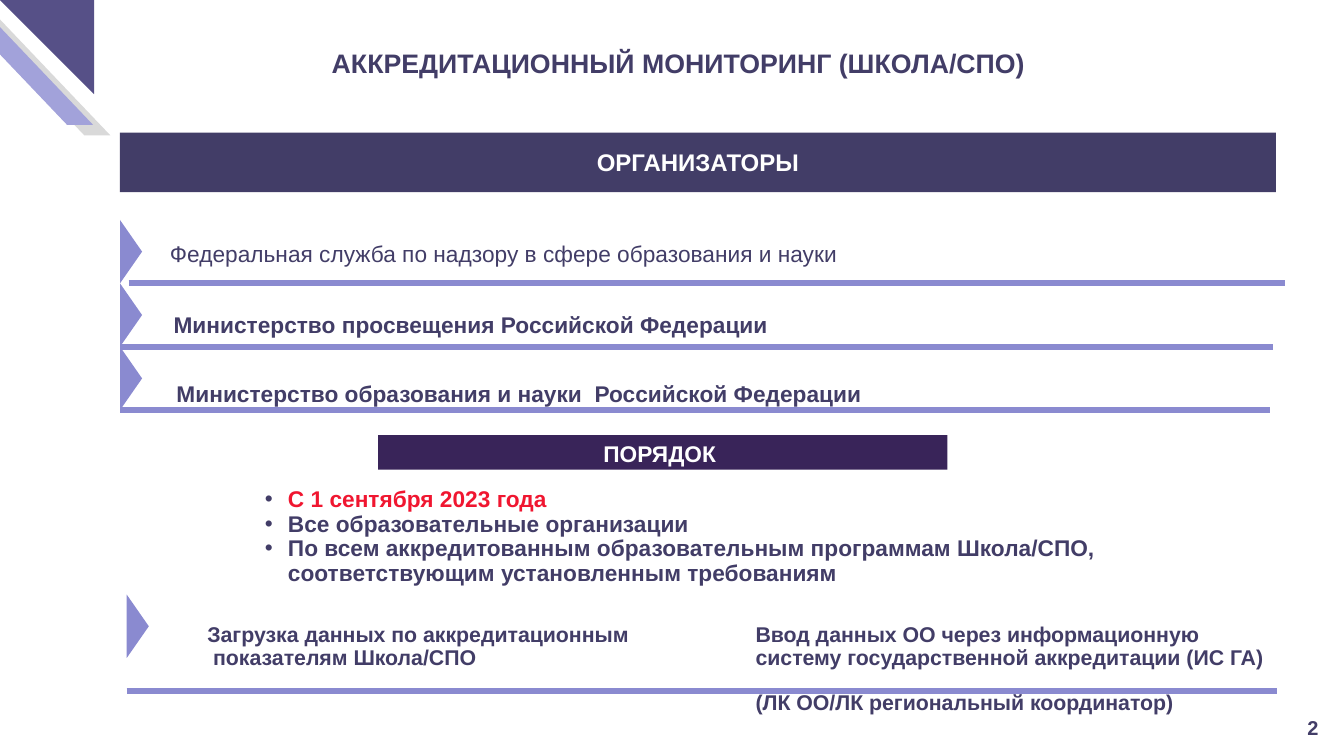
import pptx
import pptx.dml.color
import pptx.enum.shapes
import pptx.enum.text
import pptx.oxml.ns
import pptx.util
from dataclasses import dataclass
from lxml import etree

Inches = pptx.util.Inches
Pt = pptx.util.Pt
qn = pptx.oxml.ns.qn
SHAPES = pptx.enum.shapes.MSO_SHAPE
ALIGN = pptx.enum.text.PP_ALIGN
ANCHOR = pptx.enum.text.MSO_ANCHOR


@dataclass(frozen=True)
class Theme:
    font: str = "Arial"
    ink: str = "423D67"
    accent: str = "8A8AD0"
    alert: str = "F01630"
    plum: str = "392459"
    white: str = "FFFFFF"
    corner_dark: str = "565087"
    corner_light: str = "A2A2DA"
    corner_grey: str = "D9D9D9"
    title: int = 20
    heading: int = 18
    body: int = 17
    note: int = 16
    number: int = 15
    rule: float = 4.5


THEME = Theme()
PADDED = (0.1, 0.05)


def rgb(value):
    return pptx.dml.color.RGBColor.from_string(value)


def add_shape(slide, kind, box, fill):
    shape = slide.shapes.add_shape(kind, *map(Inches, box))
    shape.shadow.inherit = False
    shape.fill.solid()
    shape.fill.fore_color.rgb = rgb(fill)
    shape.line.fill.background()
    return shape


def set_frame(shape, insets=(0, 0), anchor=ANCHOR.TOP):
    frame = shape.text_frame
    frame.word_wrap = True
    frame.vertical_anchor = anchor
    frame.margin_left = frame.margin_right = Inches(insets[0])
    frame.margin_top = frame.margin_bottom = Inches(insets[1])
    return frame


def add_bullet(paragraph, indent=0.24):
    properties = paragraph._p.get_or_add_pPr()
    properties.set("marL", str(Inches(indent)))
    properties.set("indent", str(-Inches(indent)))
    color = etree.SubElement(properties, qn("a:buClr"))
    etree.SubElement(color, qn("a:srgbClr")).set("val", THEME.ink)
    etree.SubElement(properties, qn("a:buFont")).set("typeface", THEME.font)
    etree.SubElement(properties, qn("a:buChar")).set("char", "•")


def write(frame, lines, size, color=THEME.ink, bold=True, align=ALIGN.LEFT,
          spacing=None, bullets=False):
    """Write one paragraph per line; a tuple is one paragraph with line breaks."""
    paragraphs = []
    for index, line in enumerate(lines):
        paragraph = frame.paragraphs[0] if index == 0 else frame.add_paragraph()
        if bullets:
            add_bullet(paragraph)
        paragraph.alignment = align
        if spacing:
            paragraph.line_spacing = spacing
        for part, text in enumerate(line if isinstance(line, tuple) else (line,)):
            if part:
                paragraph.add_line_break()
            run = paragraph.add_run()
            run.text = text
            run.font.name = THEME.font
            run.font.size = Pt(size)
            run.font.bold = bold
            run.font.color.rgb = rgb(color)
        paragraphs.append(paragraph)
    return paragraphs


def add_text(slide, box, lines, size, insets=(0, 0), **style):
    text_box = slide.shapes.add_textbox(*map(Inches, box))
    return write(set_frame(text_box, insets), lines, size, **style)


def add_rule(slide, left, top, width):
    rule = slide.shapes.add_connector(
        pptx.enum.shapes.MSO_CONNECTOR.STRAIGHT,
        Inches(left), Inches(top), Inches(left + width), Inches(top))
    rule.line.color.rgb = rgb(THEME.accent)
    rule.line.width = Pt(THEME.rule)
    etree.SubElement(rule._element.spPr, qn("a:effectLst"))


def add_marker(slide, left, top, width=0.23, height=0.66):
    """Right-pointing triangle whose visible box starts at left, top."""
    shift = (height - width) / 2
    marker = add_shape(slide, SHAPES.ISOSCELES_TRIANGLE,
                       (left - shift, top + shift, height, width), THEME.accent)
    marker.rotation = 90


def add_corner(slide, left, top):
    for x, y, color in ((-0.36, 0.11, THEME.corner_grey),
                        (-0.54, 0, THEME.corner_light)):
        stripe = add_shape(slide, SHAPES.PARALLELOGRAM,
                           (left + x, top + y, 1.51, 1.3), color)
        stripe.adjustments[0] = 0.953
        stripe._element.spPr.find(qn("a:xfrm")).set("flipH", "1")
    triangle = add_shape(slide, SHAPES.RIGHT_TRIANGLE,
                         (left, top, 0.98, 0.98), THEME.corner_dark)
    triangle.rotation = 180


def add_banner(slide, box, text, fill, size, insets, anchor):
    banner = add_shape(slide, SHAPES.RECTANGLE, box, fill)
    write(set_frame(banner, insets, anchor), [text], size,
          color=THEME.white, align=ALIGN.CENTER)


def add_organizers(slide, left, top, pitch=0.66):
    # Rule offset and width, then text offset, box size and style for each row
    rows = (
        (0.09, 12.05, "Федеральная служба по надзору в сфере образования и науки",
         (0.52, 0.24, 11.42, 0.25), {"bold": False, "spacing": 0.9}),
        (0, 12.01, "Министерство просвещения Российской Федерации",
         (0.46, 0.24, 7.14, 0.36), {"insets": PADDED}),
        (0, 11.98, "Министерство образования и науки  Российской Федерации",
         (0.49, 0.3, 10.46, 0.63), {"insets": PADDED}),
    )
    for index, (offset, rule_width, text, (x, y, width, height), style) in enumerate(rows):
        row_top = top + index * pitch
        add_marker(slide, left, row_top)
        add_rule(slide, left + offset, row_top + pitch, rule_width)
        add_text(slide, (left + x, row_top + y, width, height), [text],
                 THEME.body, **style)


def add_procedure(slide, box):
    paragraphs = add_text(
        slide, box,
        ["C 1 сентября 2023 года",
         "Все образовательные организации",
         ("По всем аккредитованным образовательным программам Школа/СПО, ",
          "соответствующим установленным требованиям")],
        THEME.body, spacing=0.9, bullets=True)
    paragraphs[0].runs[0].font.color.rgb = rgb(THEME.alert)


def add_data_entry(slide, left, top):
    add_marker(slide, left, top)
    add_rule(slide, left, top + 1, 11.98)
    upload = add_text(
        slide, (left + 0.84, top + 0.31, 5.32, 0.48),
        ["Загрузка данных по аккредитационным", "показателям Школа/СПО"],
        THEME.note, spacing=0.9)
    upload[1]._p.get_or_add_pPr().set("marL", str(Inches(0.06)))
    entry = add_text(
        slide, (left + 6.55, top + 0.31, 5.31, 0.96),
        ["Ввод данных ОО через информационную систему "
         "государственной аккредитации (ИС ГА)",
         "(ЛК ОО/ЛК региональный координатор)"],
        THEME.note, spacing=0.9)
    entry[1].space_before = Pt(16.5)


def main():
    presentation = pptx.Presentation()
    presentation.slide_width = Inches(14)
    presentation.slide_height = Inches(7.87)
    slide = presentation.slides.add_slide(presentation.slide_layouts[6])

    # Corner decoration and title
    add_corner(slide, 0, 0)
    add_text(slide, (1.25, 0.44, 11.71, 0.44),
             ["АККРЕДИТАЦИОННЫЙ МОНИТОРИНГ (ШКОЛА/СПО) "], THEME.title,
             insets=(0.11, 0.05), align=ALIGN.CENTER)

    # Organizers
    add_banner(slide, (1.25, 1.38, 12.04, 0.62), "ОРГАНИЗАТОРЫ", THEME.ink,
               THEME.heading, (0, 0.08), ANCHOR.MIDDLE)
    add_organizers(slide, 1.25, 2.29)

    # Procedure
    add_banner(slide, (3.94, 4.53, 5.93, 0.36), "ПОРЯДОК ", THEME.plum,
               THEME.body, PADDED, ANCHOR.TOP)
    add_procedure(slide, (2.76, 5.08, 9, 1.02))
    add_data_entry(slide, 1.32, 6.19)

    # Page number
    add_text(slide, (13.51, 7.4, 0.28, 0.35), ["2"], THEME.number,
             insets=(0.11, 0.05))

    presentation.save("out.pptx")


if __name__ == "__main__":
    main()
